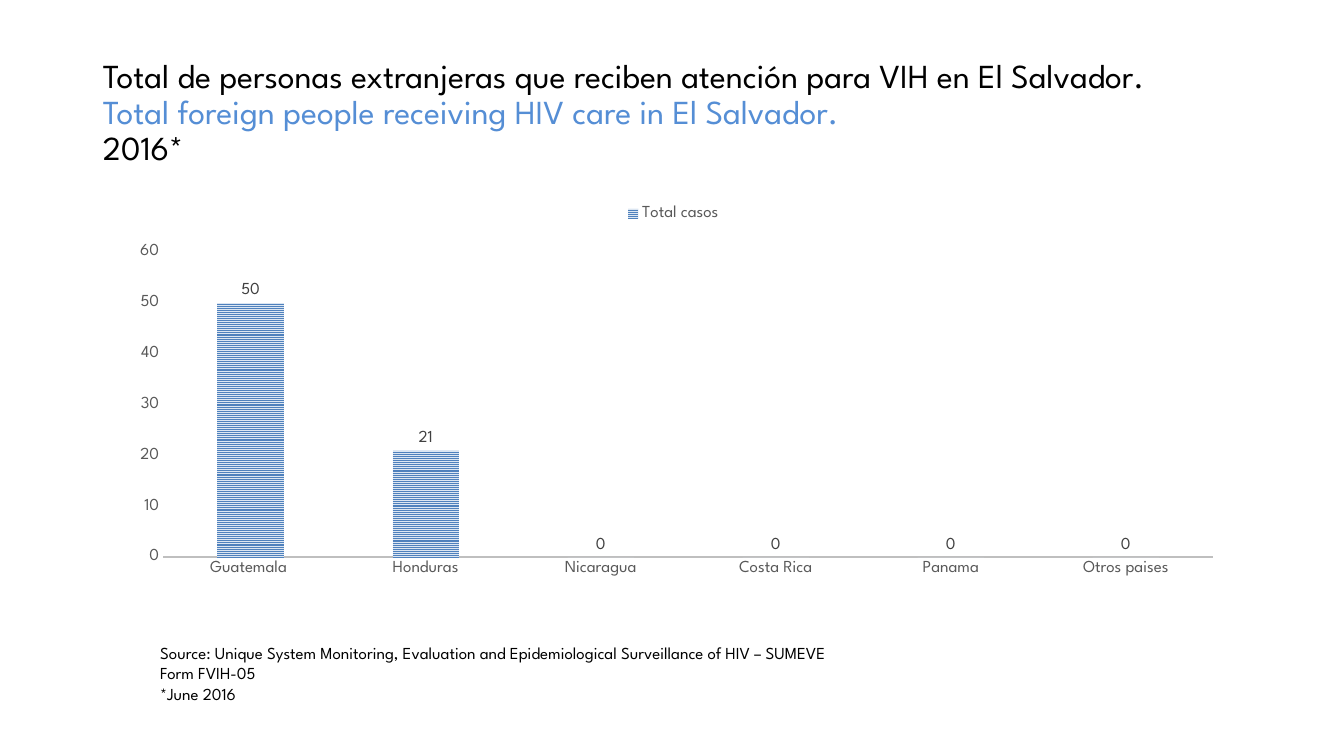
from lxml.etree import SubElement
from pptx import Presentation
from pptx.chart.data import CategoryChartData
from pptx.dml.color import RGBColor
from pptx.enum.chart import XL_CHART_TYPE, XL_LABEL_POSITION, XL_LEGEND_POSITION, XL_TICK_MARK
from pptx.enum.dml import MSO_PATTERN
from pptx.enum.text import MSO_ANCHOR, MSO_AUTO_SIZE, PP_ALIGN
from pptx.oxml.ns import qn
from pptx.util import Inches, Pt

BLACK = RGBColor(0x00, 0x00, 0x00)
LIGHT_BLUE = RGBColor(0x55, 0x8E, 0xD5)
BAR_BLUE = RGBColor(0x4F, 0x81, 0xBD)
BAR_PALE = RGBColor(0xDC, 0xE6, 0xF2)
AXIS_TEXT = RGBColor(0x59, 0x59, 0x59)
AXIS_LINE = RGBColor(0xBF, 0xBF, 0xBF)
LABEL_TEXT = RGBColor(0x40, 0x40, 0x40)


def apply(target, values):
    for name, value in values.items():
        setattr(target, name, value)


class HivCareSlide:
    """Holds the font and the current slide."""

    font_name = "League Spartan"

    def __init__(self, presentation):
        self.slide = presentation.slides.add_slide(presentation.slide_layouts[5])

    def style(self, font, size, color):
        apply(font, {"name": self.font_name, "size": Pt(size)})
        font.color.rgb = color

    def title(self, box, lines):
        heading = self.slide.shapes.title
        apply(heading, dict(zip(("left", "top", "width", "height"), map(Inches, box))))
        apply(heading.text_frame, {"auto_size": MSO_AUTO_SIZE.NONE,
                                   "vertical_anchor": MSO_ANCHOR.MIDDLE, "word_wrap": True})
        paragraph = heading.text_frame.paragraphs[0]
        apply(paragraph, {"alignment": PP_ALIGN.LEFT, "line_spacing": 0.9})
        for index, (text, color) in enumerate(lines):
            if index:
                paragraph.add_line_break()
            run = paragraph.add_run()
            run.text = text
            self.style(run.font, 24, color)

    def note(self, box, lines):
        frame = self.slide.shapes.add_textbox(*map(Inches, box)).text_frame
        apply(frame, {"word_wrap": True, "auto_size": MSO_AUTO_SIZE.SHAPE_TO_FIT_TEXT,
                      "text": "\n".join(lines)})
        for paragraph in frame.paragraphs:
            self.style(paragraph.runs[0].font, 12, BLACK)

    def column_chart(self, box, series_name, cases):
        data = CategoryChartData()
        data.categories = list(cases)
        data.add_series(series_name, list(cases.values()))
        chart = self.slide.shapes.add_chart(
            XL_CHART_TYPE.COLUMN_CLUSTERED, *map(Inches, box), data).chart
        apply(chart, {"has_title": False, "has_legend": True})
        self.style(chart.font, 10, BLACK)
        apply(chart.legend, {"position": XL_LEGEND_POSITION.TOP, "include_in_layout": False})
        self.style(chart.legend.font, 12, AXIS_TEXT)

        # Axes
        for axis in (chart.category_axis, chart.value_axis):
            apply(axis, {"has_major_gridlines": False, "major_tick_mark": XL_TICK_MARK.NONE,
                         "minor_tick_mark": XL_TICK_MARK.NONE})
            self.style(axis.tick_labels.font, 12, AXIS_TEXT)
        apply(chart.value_axis, {"minimum_scale": 0, "maximum_scale": 60, "major_unit": 10})
        chart.value_axis.format.line.fill.background()
        base_line = chart.category_axis.format.line
        base_line.color.rgb = AXIS_LINE
        base_line.width = Pt(1.5)

        # Bars and their values
        plot = chart.plots[0]
        apply(plot, {"gap_width": 164, "overlap": -22, "vary_by_categories": False,
                     "has_data_labels": True})
        apply(plot.data_labels, {"show_value": True, "position": XL_LABEL_POSITION.OUTSIDE_END})
        self.style(plot.data_labels.font, 12, LABEL_TEXT)
        bar_fill = plot.series[0].format.fill
        bar_fill.patterned()
        bar_fill.pattern = MSO_PATTERN.NARROW_HORIZONTAL
        bar_fill.fore_color.rgb = BAR_BLUE
        bar_fill.back_color.rgb = BAR_PALE
        self.place_plot(chart, {"x": 0.038, "y": 0.129, "w": 0.947, "h": 0.689})

    def place_plot(self, chart, fractions):
        plot_area = chart.element.find(".//" + qn("c:plotArea"))
        layout = plot_area.find(qn("c:layout"))
        if layout is None:
            layout = SubElement(plot_area, qn("c:layout"))
            plot_area.insert(0, layout)
        manual = SubElement(layout, qn("c:manualLayout"))
        settings = {"layoutTarget": "inner", "xMode": "edge", "yMode": "edge", **fractions}
        for tag, value in settings.items():
            SubElement(manual, qn("c:" + tag)).set("val", str(value))


def main():
    presentation = Presentation()
    apply(presentation, {"slide_width": Inches(13.33), "slide_height": Inches(7.5)})
    page = HivCareSlide(presentation)

    # Heading in Spanish and English
    page.title((0.92, 0.4, 11.5, 1.45), [
        ("Total de personas extranjeras que reciben atención para VIH en El Salvador.", BLACK),
        ("Total foreign people receiving HIV care in El Salvador.", LIGHT_BLUE),
        ("2016*", BLACK),
    ])

    # Cases by country of origin
    page.column_chart((1.2, 1.93, 11, 4.4), "Total casos ", {
        "Guatemala ": 50, "Honduras": 21, "Nicaragua": 0,
        "Costa Rica": 0, "Panama": 0, "Otros paises": 0,
    })

    # Source
    page.note((1.49, 6.33, 8.35, 0.71), [
        "Source: Unique System Monitoring, Evaluation and Epidemiological Surveillance of HIV – SUMEVE",
        "Form FVIH-05",
        "*June 2016",
    ])
    presentation.save("out.pptx")


if __name__ == "__main__":
    main()
